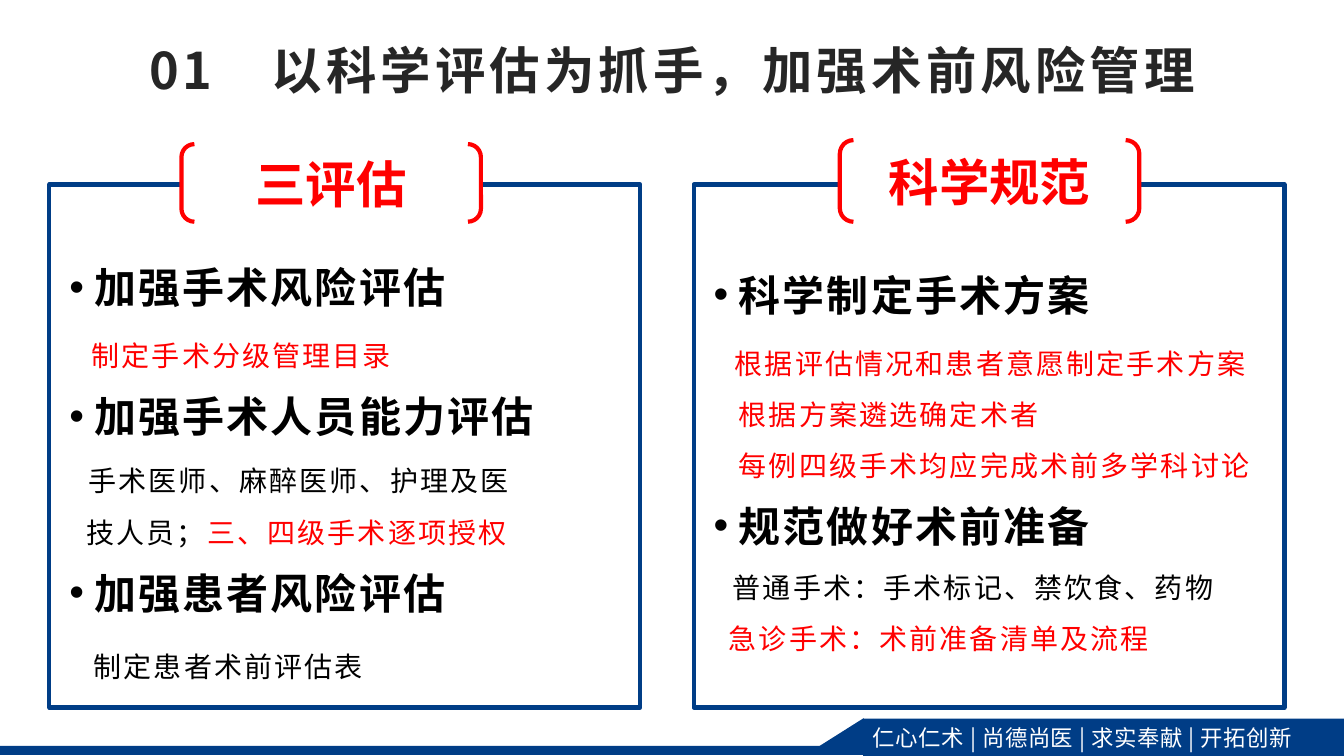
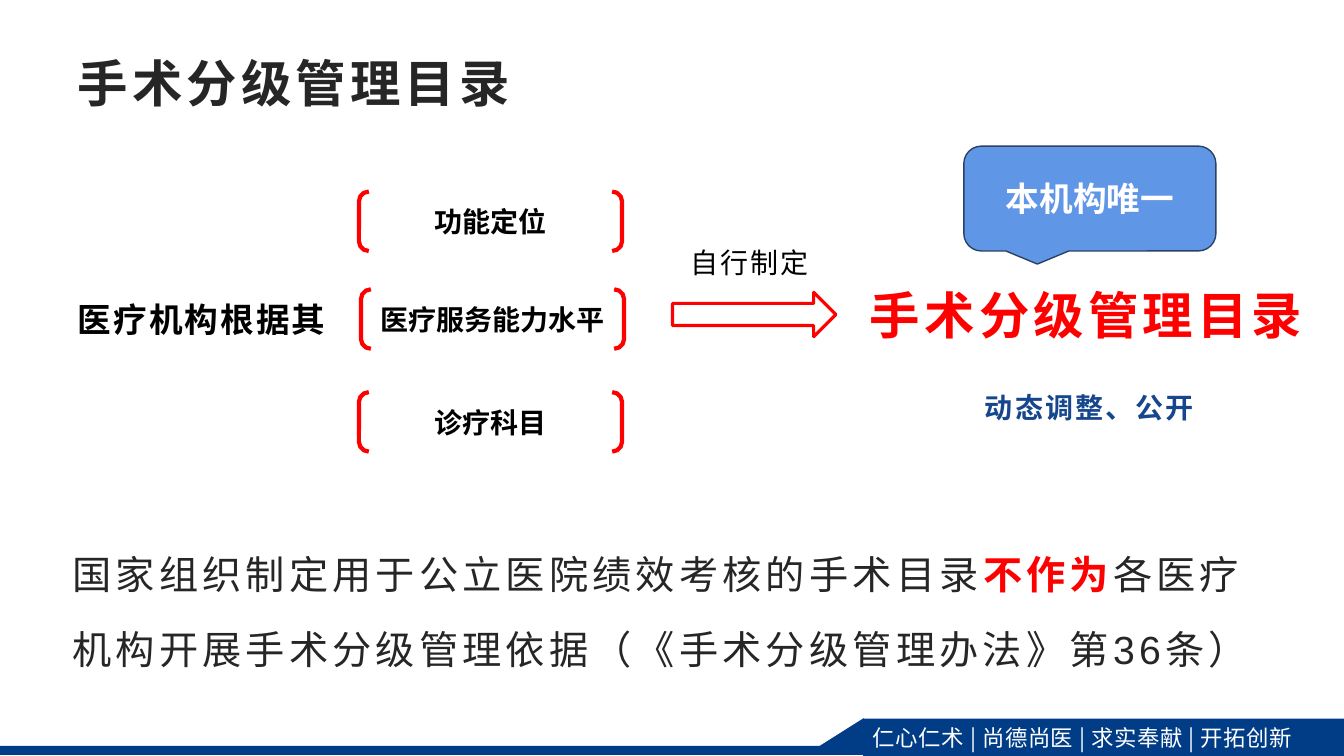
import pptx
import pptx.util
import pptx.dml.color
import pptx.enum.shapes
import pptx.enum.text
import pptx.oxml.ns
import lxml.etree

Inches = pptx.util.Inches
Pt = pptx.util.Pt
KIND = pptx.enum.shapes.MSO_SHAPE
ALIGN = pptx.enum.text.PP_ALIGN
MIDDLE = pptx.enum.text.MSO_ANCHOR.MIDDLE
qn = pptx.oxml.ns.qn

COLORS = {
    "navy": "003D86", "red": "FF0000", "black": "000000", "white": "FFFFFF",
    "ink": "262626", "blue": "16468D", "sky": "6096E6", "edge": "2A4265",
}
SANS = "Noto Sans CJK SC"
FOOT = "Noto Sans CJK JP"
ARIAL = "Arial"


def color(name):
    return pptx.dml.color.RGBColor.from_string(COLORS[name])


def style(run, size, tint, bold=False, font=ARIAL, gap=0):
    run.font.size = Pt(size)
    run.font.bold = bold
    run.font.name = font
    run.font.color.rgb = color(tint)
    props = run._r.get_or_add_rPr()
    if gap:
        props.set("spc", str(int(gap * 100)))
    east = lxml.etree.Element(qn("a:ea"), typeface=FOOT if font == FOOT else SANS)
    props.find(qn("a:latin")).addnext(east)


def write(shape, text, size, tint, align=ALIGN.CENTER, **look):
    frame = shape.text_frame
    frame.text = text
    frame.vertical_anchor = MIDDLE
    para = frame.paragraphs[0]
    para.alignment = align
    style(para.runs[0], size, tint, **look)


def draw(slide, kind, box, fill=None, line=None, width=3):
    shape = slide.shapes.add_shape(kind, *map(Inches, box))
    shape.shadow.inherit = False
    if fill:
        shape.fill.solid()
        shape.fill.fore_color.rgb = color(fill)
    else:
        shape.fill.background()
    if line:
        shape.line.color.rgb = color(line)
        shape.line.width = Pt(width)
    else:
        shape.line.fill.background()
    return shape


def text_box(slide, box):
    shape = slide.shapes.add_textbox(*map(Inches, box))
    shape.text_frame.word_wrap = True
    return shape


def label(slide, box, text, size, tint, **look):
    write(text_box(slide, box), text, size, tint, **look)


def bracket(slide, box, text, size, tint):
    shape = draw(slide, KIND.DOUBLE_BRACKET, box, "white", "red")
    shape.text_frame.word_wrap = False
    write(shape, text, size, tint, bold=True)


def new_slide(deck, title, top, align, font):
    slide = deck.slides.add_slide(deck.slide_layouts[5])
    head = slide.shapes.title
    head.left, head.top, head.width, head.height = map(Inches, (0.67, top, 12, 0.77))
    write(head, title, 36, "ink", align, bold=True, font=font, gap=3)
    return slide


def footer(slide):
    rule = draw(slide, KIND.RECTANGLE, (0, 7.4, 10.04, 0.09), "navy")
    slant = draw(slide, KIND.RIGHT_TRIANGLE, (8.1, 7.02, 0.36, 0.57), "navy")
    slant.rotation = 270
    band = draw(slide, KIND.RECTANGLE, (8.56, 7.13, 4.78, 0.37), "navy")
    band.text_frame.word_wrap = False
    write(band, "仁心仁术 | 尚德尚医 | 求实奉献 | 开拓创新", 16, "white",
          ALIGN.LEFT, font=FOOT, gap=0.4)
    tree = slide.slide_layout.shapes.element
    for part in (rule, slant, band):
        tree.append(part.element)


def bullet(para):
    props = para._p.get_or_add_pPr()
    props.set("marL", str(Inches(0.25)))
    props.set("indent", str(-Inches(0.25)))
    lxml.etree.SubElement(props, qn("a:buFont"), typeface=ARIAL)
    lxml.etree.SubElement(props, qn("a:buChar"), char="•")


def points(slide, box, rows):
    frame = text_box(slide, box).text_frame
    for index, (indent, before, parts) in enumerate(rows):
        para = frame.add_paragraph() if index else frame.paragraphs[0]
        para.line_spacing = Pt(36)
        para.space_before = Pt(before)
        head = indent is None
        if head:
            bullet(para)
        else:
            para._p.get_or_add_pPr().set("marL", str(Inches(indent)))
        for text, tint in parts:
            run = para.add_run()
            run.text = text
            style(run, 30 if head else 20, tint, bold=head, font=SANS, gap=1.5)


def panel(slide, left, mark, name, top, rows):
    draw(slide, KIND.RECTANGLE, (left, 1.83, 5.86, 5.19), line="navy")
    bracket(slide, mark, name, 36, "red")
    points(slide, (left + 0.1, top, 5.76, 4.3), rows)


def risk(deck):
    slide = new_slide(deck, "01　以科学评估为抓手，加强术前风险管理", 0.3, ALIGN.CENTER, SANS)
    panel(slide, 0.49, (1.8, 1.43, 2.97, 0.77), "三评估", 2.55, [
        (None, 0, [("加强手术风险评估", "black")]),
        (0.22, 7, [("制定手术分级管理目录", "red")]),
        (None, 13, [("加强手术人员能力评估", "black")]),
        (0.19, 4, [("手术医师、麻醉医师、护理及医", "black")]),
        (0.17, 1, [("技人员；", "black"), ("三、四级手术逐项授权", "red")]),
        (None, 13, [("加强患者风险评估", "black")]),
        (0.24, 11, [("制定患者术前评估表", "black")]),
    ])
    panel(slide, 6.88, (8.33, 1.39, 2.97, 0.81), "科学规范", 2.62, [
        (None, 0, [("科学制定手术方案", "black")]),
        (0.21, 7, [("根据评估情况和患者意愿制定手术方案", "red")]),
        (0.25, 1, [("根据方案遴选确定术者", "red")]),
        (0.25, 0, [("每例四级手术均应完成术前多学科讨论", "red")]),
        (None, 13, [("规范做好术前准备", "black")]),
        (0.19, 2, [("普通手术：手术标记、禁饮食、药物", "black")]),
        (0.15, 1, [("急诊手术：术前准备清单及流程", "red")]),
    ])
    return slide


def flow(slide):
    label(slide, (0.15, 2.87, 3.7, 0.6), "医疗机构根据其", 24, "black", bold=True, gap=1.5)
    basis = [(3.56, 1.9, "功能定位"), (3.58, 2.87, "医疗服务能力水平"), (3.56, 3.89, "诊疗科目")]
    for left, top, text in basis:
        bracket(slide, (left, top, 2.61, 0.59), text, 20, "black")
    draw(slide, KIND.RIGHT_ARROW, (6.67, 2.9, 1.62, 0.44), line="red", width=2.25)
    label(slide, (6.58, 2.34, 1.71, 0.53), "自行制定", 20, "black", gap=1.5)
    label(slide, (8.53, 2.73, 4.56, 0.77), "手术分级管理目录", 36, "red",
          align=ALIGN.LEFT, bold=True, gap=3)
    label(slide, (9.57, 3.78, 2.47, 0.53), "动态调整、公开", 20, "blue", bold=True, gap=1.5)
    note = draw(slide, KIND.ROUNDED_RECTANGULAR_CALLOUT, (9.56, 1.45, 2.5, 1.04), "sky", "edge", 1)
    write(note, "本机构唯一", 24, "white", bold=True)


def remark(slide, box):
    frame = text_box(slide, box).text_frame
    frame.vertical_anchor = MIDDLE
    para = frame.paragraphs[0]
    para.line_spacing = Pt(54)
    for text, tint, bold in [
        ("国家组织制定用于公立医院绩效考核的手术目录", "ink", False),
        ("不作为", "red", True),
        ("各医疗机构开展手术分级管理依据（《手术分级管理办法》第36条）", "ink", False),
    ]:
        run = para.add_run()
        run.text = text
        style(run, 28, tint, bold=bold, gap=3)


def main():
    deck = pptx.Presentation()
    deck.slide_width, deck.slide_height = Inches(13.33), Inches(7.5)
    footer(risk(deck))
    slide = new_slide(deck, "手术分级管理目录", 0.43, ALIGN.LEFT, ARIAL)
    flow(slide)
    remark(slide, (0.62, 5.06, 12, 1.73))
    deck.save("out.pptx")


if __name__ == "__main__":
    main()
